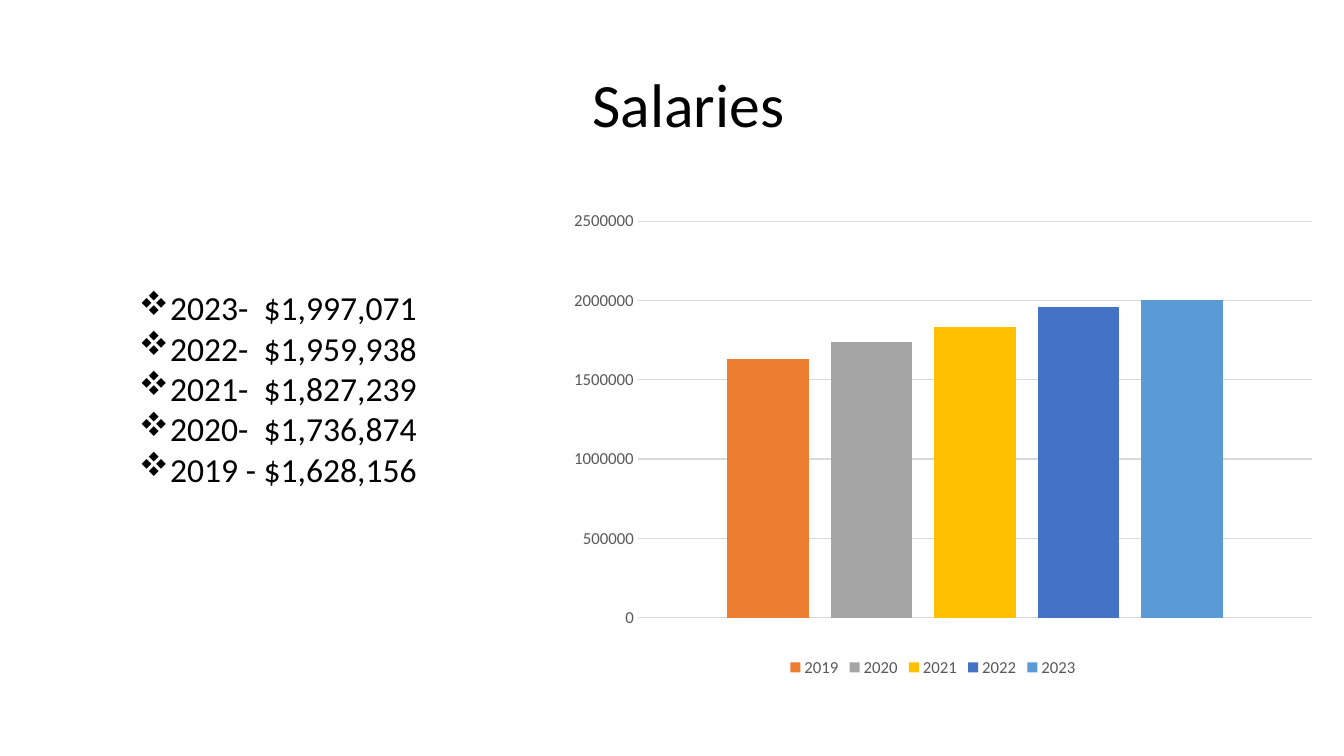
from dataclasses import dataclass

from lxml import etree
from pptx import Presentation
from pptx.chart.data import CategoryChartData
from pptx.dml.color import RGBColor
from pptx.enum.chart import XL_CHART_TYPE, XL_LEGEND_POSITION, XL_TICK_MARK
from pptx.enum.text import PP_ALIGN
from pptx.oxml import parse_xml
from pptx.oxml.ns import nsdecls, qn
from pptx.util import Inches, Pt

COLUMNS = XL_CHART_TYPE.COLUMN_CLUSTERED
LEGEND_BOTTOM = XL_LEGEND_POSITION.BOTTOM
NO_TICKS = XL_TICK_MARK.NONE
CENTER = PP_ALIGN.CENTER


@dataclass(frozen=True)
class Theme:
    font: str = "Calibri"
    bullet_font: str = "Wingdings"
    title_size: int = 44
    list_size: int = 24
    chart_size: int = 12
    text: str = "000000"
    chart_text: str = "595959"
    grid: str = "D9D9D9"
    years: tuple = ("ED7D31", "A5A5A5", "FFC000", "4472C4", "5B9BD5")


THEME = Theme()

# Year, separator in the list, salary total
SALARIES = [
    ("2019", " - ", 1628156),
    ("2020", "-  ", 1736874),
    ("2021", "-  ", 1827239),
    ("2022", "-  ", 1959938),
    ("2023", "-  ", 1997071),
]
PLOT_AREA = {"x": 0.111, "y": 0.11, "w": 0.889, "h": 0.767}


def style_font(font, size, color):
    font.name = THEME.font
    font.size = Pt(size)
    font.color.rgb = RGBColor.from_string(color)


def add_text_frame(slide, box):
    frame = slide.shapes.add_textbox(*map(Inches, box)).text_frame
    frame.word_wrap = True
    return frame


def add_title(slide, box, title):
    heading = add_text_frame(slide, box).paragraphs[0]
    heading.text = title
    heading.alignment = CENTER
    style_font(heading.runs[0].font, THEME.title_size, THEME.text)


def add_bullet(paragraph):
    """Hang a diamond bullet, which is the letter v in the symbol font."""
    indent = Inches(0.31)
    properties = paragraph._p.get_or_add_pPr()
    properties.set("marL", str(indent))
    properties.set("indent", str(-indent))
    etree.SubElement(properties, qn("a:buFont")).set("typeface", THEME.bullet_font)
    etree.SubElement(properties, qn("a:buChar")).set("char", "v")


def add_salary_list(slide, box):
    """List the totals, newest year first."""
    frame = add_text_frame(slide, box)
    frame.text = "\n".join(f"{year}{separator}${total:,}"
                           for year, separator, total in reversed(SALARIES))
    for entry in frame.paragraphs:
        add_bullet(entry)
        style_font(entry.runs[0].font, THEME.list_size, THEME.text)


def set_plot_area(chart):
    """Fix the inner plot area as fractions of the chart box."""
    places = "".join(f'<c:{side} val="{value}"/>' for side, value in PLOT_AREA.items())
    layout = parse_xml(
        f'<c:layout {nsdecls("c")}><c:manualLayout><c:layoutTarget val="inner"/>'
        f'<c:xMode val="edge"/><c:yMode val="edge"/>{places}'
        '</c:manualLayout></c:layout>')
    plot_area = chart._chartSpace.chart.plotArea
    for automatic in plot_area.findall(qn("c:layout")):
        plot_area.remove(automatic)
    plot_area.insert(0, layout)


def add_salary_chart(slide, box):
    """Chart the totals, rounded to ten thousand dollars."""
    salary_data = CategoryChartData()
    salary_data.categories = ["1"]
    for year, _, total in SALARIES:
        salary_data.add_series(year, [round(total, -4)])
    chart = slide.shapes.add_chart(COLUMNS, *map(Inches, box), salary_data).chart
    chart.has_title = False
    style_font(chart.font, THEME.chart_size, THEME.chart_text)
    set_plot_area(chart)

    columns = chart.plots[0]
    columns.gap_width = 219
    columns.overlap = -27
    columns.vary_by_categories = False
    for series, color in zip(columns.series, THEME.years):
        series.format.fill.solid()
        series.format.fill.fore_color.rgb = RGBColor.from_string(color)

    chart.category_axis.visible = False
    dollars = chart.value_axis
    dollars.minimum_scale = 0
    dollars.maximum_scale = 2500000
    dollars.major_unit = 500000
    dollars.major_tick_mark = NO_TICKS
    dollars.minor_tick_mark = NO_TICKS
    dollars.format.line.fill.background()
    style_font(dollars.tick_labels.font, THEME.chart_size, THEME.chart_text)
    grid = dollars.major_gridlines.format.line
    grid.width = Pt(0.75)
    grid.color.rgb = RGBColor.from_string(THEME.grid)

    chart.has_legend = True
    chart.legend.position = LEGEND_BOTTOM
    chart.legend.include_in_layout = False
    style_font(chart.legend.font, THEME.chart_size, THEME.chart_text)


def main():
    deck = Presentation()
    deck.slide_width = Inches(13.33)
    deck.slide_height = Inches(7.5)
    slide = deck.slides.add_slide(deck.slide_layouts[6])
    add_title(slide, (0.46, 0.61, 12.74, 0.84), "Salaries")
    add_salary_list(slide, (1.28, 2.8, 3.5, 2.52))
    add_salary_chart(slide, (5.49, 1.63, 7.53, 5.13))
    deck.save("out.pptx")


if __name__ == "__main__":
    main()
